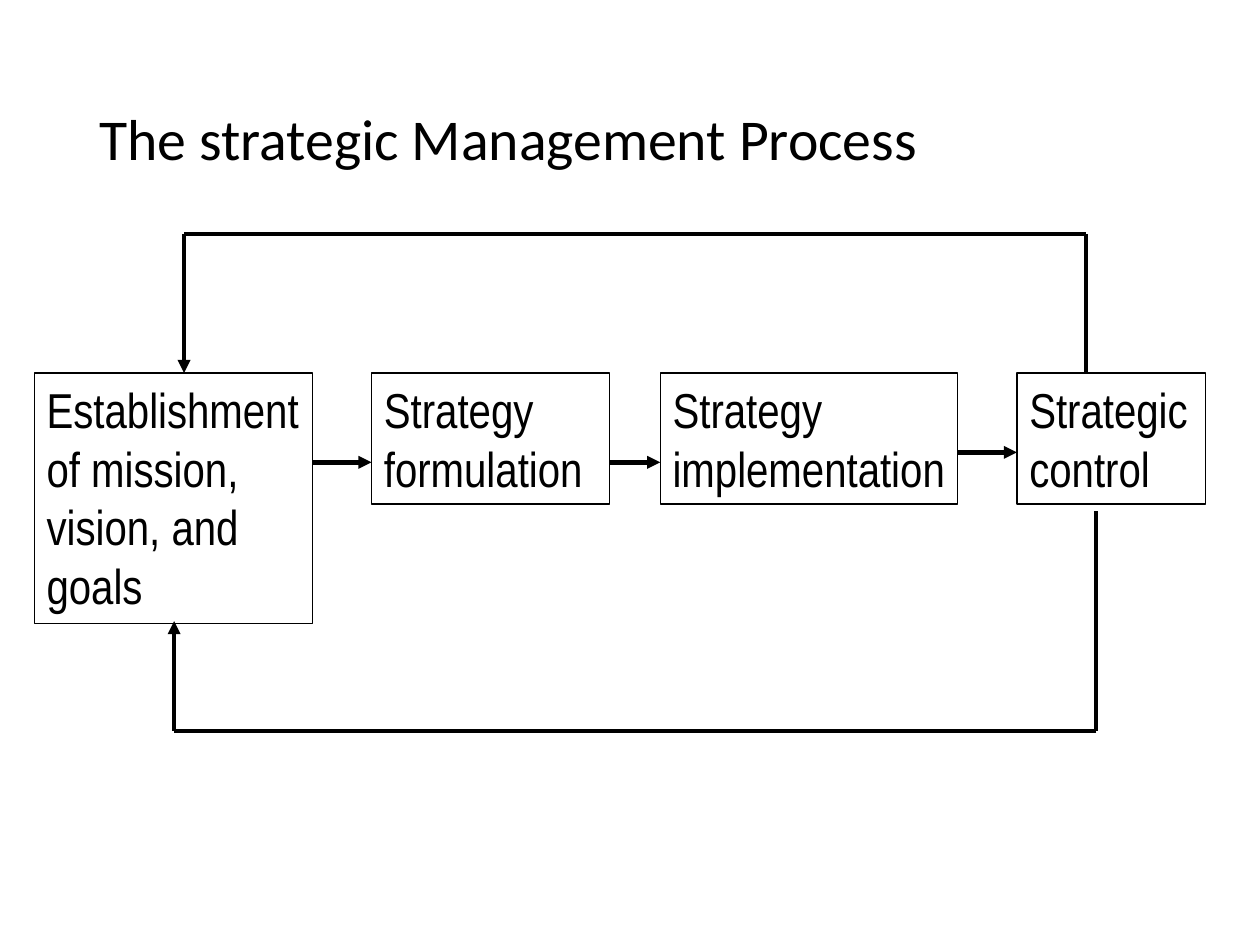
from itertools import pairwise

from lxml import etree
from pptx import Presentation
from pptx.dml.color import RGBColor
from pptx.enum.shapes import MSO_CONNECTOR, MSO_SHAPE
from pptx.enum.text import MSO_ANCHOR, PP_ALIGN
from pptx.oxml.ns import qn
from pptx.util import Cm, Pt

STRAIGHT = MSO_CONNECTOR.STRAIGHT
RECTANGLE = MSO_SHAPE.RECTANGLE
TOP, MIDDLE = MSO_ANCHOR.TOP, MSO_ANCHOR.MIDDLE
LEFT = PP_ALIGN.LEFT

COLORS = {"ink": "000000", "paper": "FFFFFF"}

STAGES = [
    ("Establishment of mission, vision, and goals", 0, 5.61, 5.05),
    ("Strategy formulation", 6.8, 4.8, 2.64),
    ("Strategy implementation", 12.62, 5.99, 2.64),
    ("Strategic control", 19.81, 3.81, 2.64),
]
ARROW_DROPS = [1.8, 1.8, 1.6]
FEEDBACK_LOOPS = [
    [(21.2, 0), (21.2, -2.8), (3.02, -2.8), (3.02, 0)],
    [(21.41, 2.79), (21.41, 7.21), (2.82, 7.21), (2.82, 5)],
]


def color(name):
    return RGBColor.from_string(COLORS[name])


def write_text(box, text, font, size, anchor, line_spacing=1.0):
    frame = box.text_frame
    frame.word_wrap = True
    frame.vertical_anchor = anchor
    para = frame.paragraphs[0]
    para.alignment = LEFT
    para.line_spacing = line_spacing
    span = para.add_run()
    span.text = text
    span.font.name = font
    span.font.size = Pt(size)
    span.font.color.rgb = color("ink")


def draw_line(page, start, end, arrow=False):
    line = page.shapes.add_connector(
        STRAIGHT, *(Cm(length) for length in (*start, *end))
    )
    line.line.color.rgb = color("ink")
    line.line.width = Pt(2.5)
    if arrow:
        outline = line.line._get_or_add_ln()
        etree.SubElement(outline, qn("a:tailEnd"), type="triangle")
    etree.SubElement(line._element.spPr, qn("a:effectLst"))


def add_title(page, left, top, width, height):
    box = page.shapes.add_textbox(Cm(left), Cm(top), Cm(width), Cm(height))
    write_text(box, "The strategic Management Process", "Calibri", 33, MIDDLE, 0.9)


def add_stage(page, text, left, top, width, height):
    box = page.shapes.add_shape(
        RECTANGLE, Cm(left), Cm(top), Cm(width), Cm(height)
    )
    box.shadow.inherit = False
    box.fill.solid()
    box.fill.fore_color.rgb = color("paper")
    box.line.color.rgb = color("ink")
    box.line.width = Pt(0.75)
    write_text(box, text, "Arial Narrow", 28, TOP)


def add_process(page, left, top):
    for text, offset, width, height in STAGES:
        add_stage(page, text, left + offset, top, width, height)

    for (source, target), drop in zip(pairwise(STAGES), ARROW_DROPS):
        start = left + source[1] + source[2]
        end = left + target[1]
        draw_line(page, (start, top + drop), (end, top + drop), arrow=True)

    for loop in FEEDBACK_LOOPS:
        points = [(left + x, top + y) for x, y in loop]
        for start, end in pairwise(points):
            draw_line(page, start, end, arrow=end == points[-1])


def main():
    deck = Presentation()
    deck.slide_width, deck.slide_height = Cm(25.4), Cm(19.05)
    page = deck.slides.add_slide(deck.slide_layouts[6])
    add_process(page, 0.69, 7.52)
    add_title(page, 1.75, 1.02, 21.89, 3.68)
    deck.save("out.pptx")


if __name__ == "__main__":
    main()
